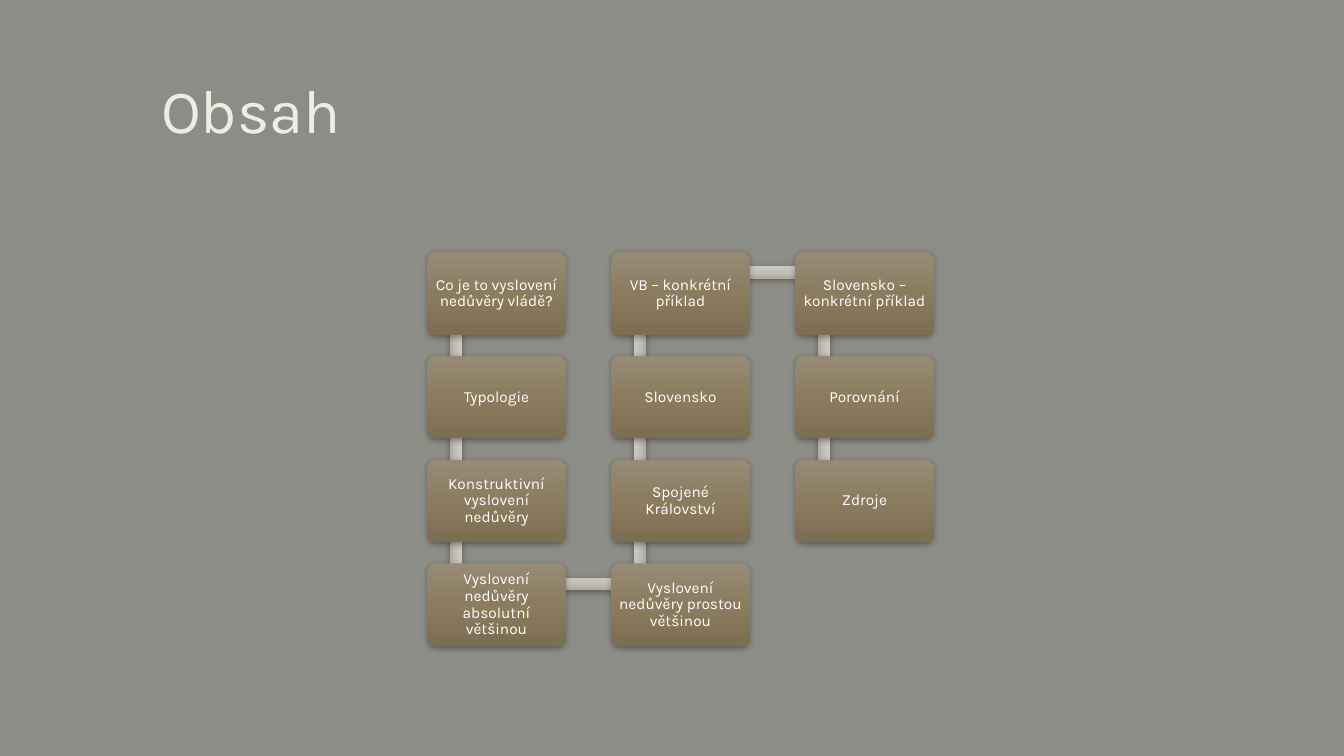
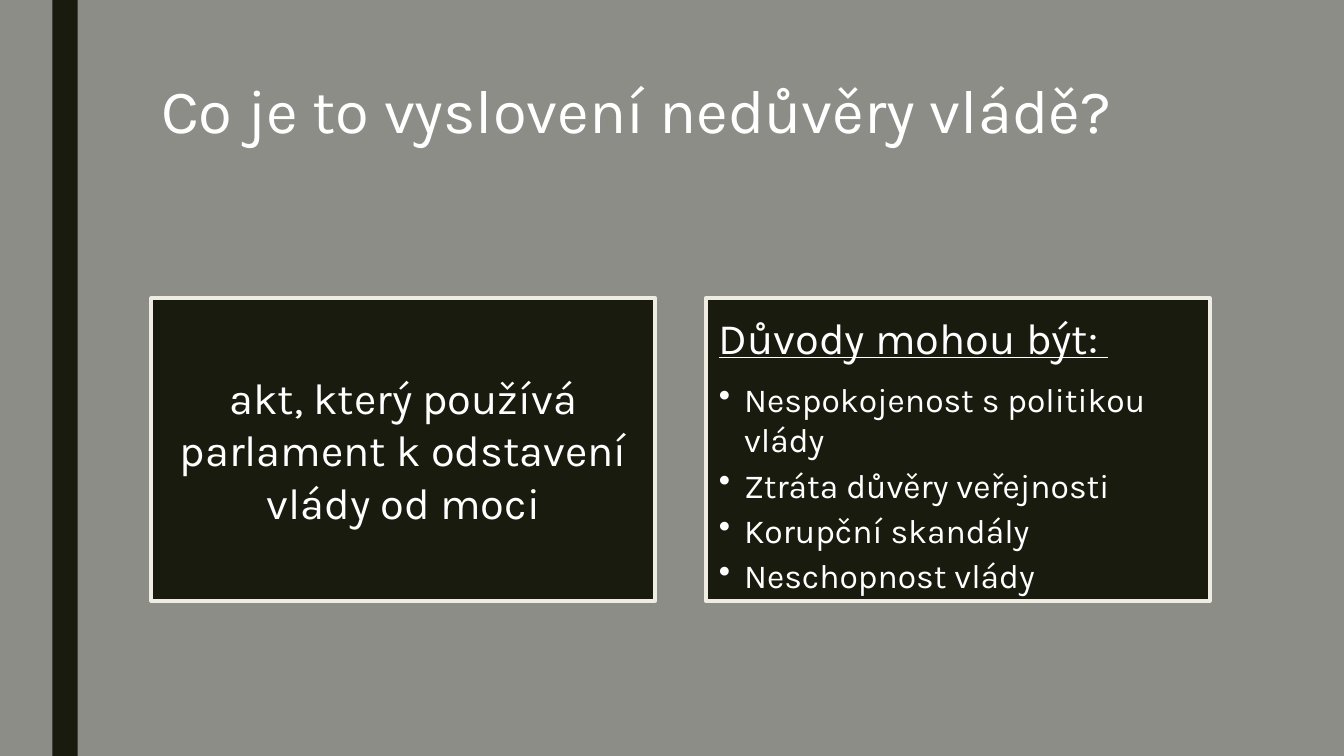
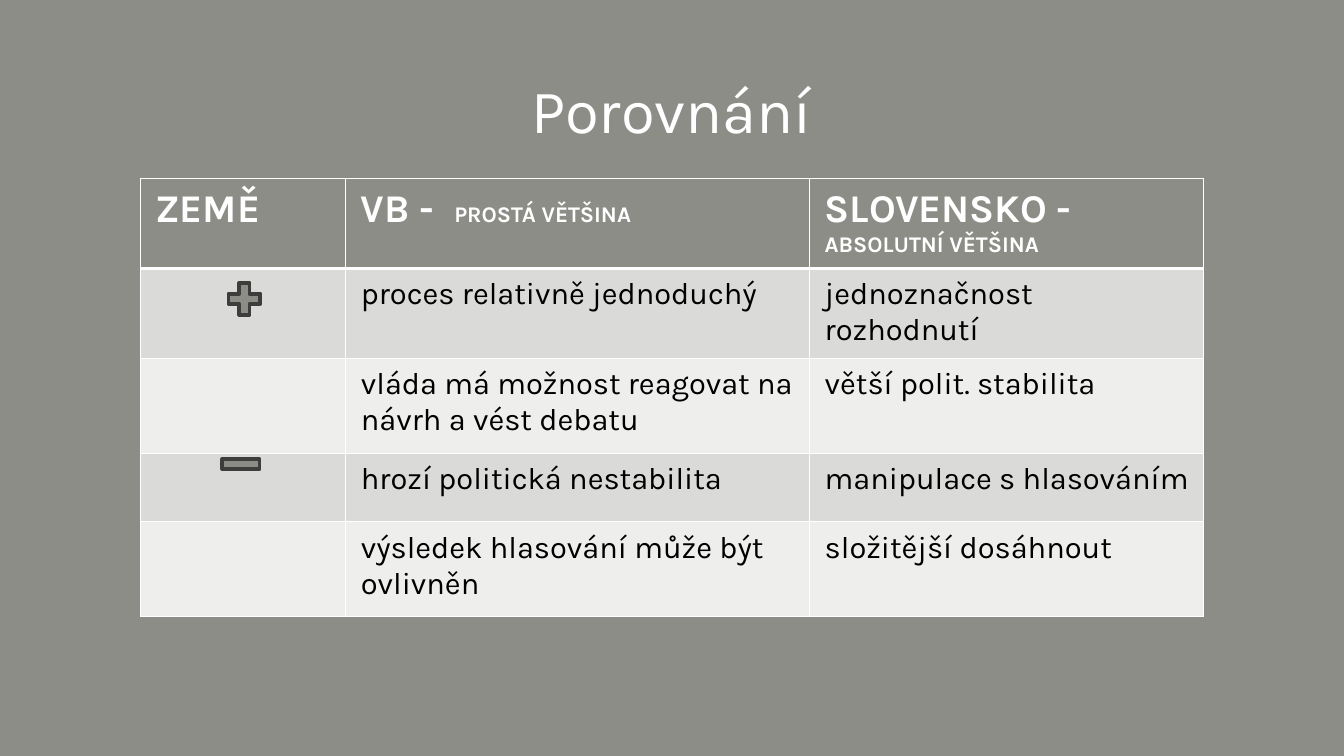
from pptx import Presentation
from pptx.dml.color import RGBColor
from pptx.enum.shapes import MSO_SHAPE as SHAPE
from pptx.enum.text import MSO_ANCHOR as ANCHOR, PP_ALIGN as ALIGN
from pptx.oxml import parse_xml
from pptx.oxml.ns import nsdecls
from pptx.util import Inches, Pt

color = RGBColor.from_string
FONT = "Karla"
GRAY = "8C8D86"
DARK = "191B0E"
CREAM = "EFEDE3"
WHITE = "FFFFFF"
BLACK = "000000"
SIGN_LINE = "3D3E3B"
BAND_FILLS = ["EEEEED", "DADBD9"]
BAR_STOPS = ["CCC7C0", "C4BFB6", "AFAAA1"]
BOX_STOPS = ["978B76", "8B7C5F", "7D6E53"]


def add_run(paragraph, text, size, hex_color, bold=False, underline=False):
    run = paragraph.add_run()
    run.text = text
    run.font.name = FONT
    run.font.size = Pt(size)
    run.font.bold = bold
    run.font.underline = underline
    run.font.color.rgb = color(hex_color)


def add_raised_shape(slide, kind, left, top, width, height, stops):
    shape = slide.shapes.add_shape(
        kind, Inches(left), Inches(top), Inches(width), Inches(height))
    properties = shape._element.spPr
    stop_xml = "".join(
        f'<a:gs pos="{position * 50000}"><a:srgbClr val="{stop}"/></a:gs>'
        for position, stop in enumerate(stops))
    properties.append(parse_xml(
        f'<a:gradFill {nsdecls("a")} rotWithShape="1"><a:gsLst>{stop_xml}</a:gsLst>'
        '<a:lin ang="5400000" scaled="0"/></a:gradFill>'))
    shape.line.fill.background()
    properties.append(parse_xml(
        f'<a:effectLst {nsdecls("a")}><a:outerShdw blurRad="57150" dist="19050" '
        'dir="5400000" algn="ctr" rotWithShape="0"><a:srgbClr val="000000">'
        '<a:alpha val="35000"/></a:srgbClr></a:outerShdw></a:effectLst>'))
    return shape


presentation = Presentation()
presentation.slide_width = Inches(13.33)
presentation.slide_height = Inches(7.5)

titles = [
    ("Obsah", CREAM, 1.5, 10.5, ALIGN.LEFT),
    ("Co je to vyslovení nedůvěry vládě?", WHITE, 1.5, 10.5, ALIGN.LEFT),
    ("Porovnání", WHITE, 0.7, 11.93, ALIGN.CENTER),
]
slides = []
for title, title_color, left, width, alignment in titles:
    slide = presentation.slides.add_slide(presentation.slide_layouts[6])
    slide.background.fill.solid()
    slide.background.fill.fore_color.rgb = color(GRAY)
    title_box = slide.shapes.add_textbox(
        Inches(left), Inches(0.75), Inches(width), Inches(1.62))
    title_box.text_frame.word_wrap = True
    paragraph = title_box.text_frame.paragraphs[0]
    paragraph.alignment = alignment
    paragraph.line_spacing = 0.89
    add_run(paragraph, title, 44, title_color)
    slides.append(slide)
contents_slide, definition_slide, comparison_slide = slides

topics = [
    "Co je to vyslovení nedůvěry vládě?",
    "Typologie",
    "Konstruktivní vyslovení nedůvěry",
    "Vyslovení nedůvěry absolutní většinou",
    "Vyslovení nedůvěry prostou většinou",
    "Spojené Království",
    "Slovensko",
    "VB – konkrétní příklad",
    "Slovensko – konkrétní příklad",
    "Porovnání",
    "Zdroje",
]
ROWS = 4
COLUMN_STEP, ROW_STEP = 1.825, 1.03
BAR = 0.12
positions = []
for index in range(len(topics)):
    column, row = divmod(index, ROWS)
    if column % 2:
        row = ROWS - 1 - row
    positions.append((4.24 + column * COLUMN_STEP, 2.5 + row * ROW_STEP))

for index, (topic, (left, top)) in enumerate(zip(topics, positions)):
    if index + 1 < len(topics):
        next_left, next_top = positions[index + 1]
        length = abs(next_left - left) + abs(next_top - top)
        center_x = (left + next_left) / 2 + 0.28
        center_y = (top + next_top) / 2 + 0.2
        bar = add_raised_shape(
            contents_slide, SHAPE.RECTANGLE, center_x - length / 2,
            center_y - BAR / 2, length, BAR, BAR_STOPS)
        if next_top != top:
            bar.rotation = 90 if next_top > top else 270
    box = add_raised_shape(
        contents_slide, SHAPE.ROUNDED_RECTANGLE, left, top, 1.37, 0.82, BOX_STOPS)
    box.adjustments[0] = 0.1
    frame = box.text_frame
    frame.word_wrap = True
    frame.vertical_anchor = ANCHOR.MIDDLE
    frame.margin_left = frame.margin_right = Inches(0.05)
    frame.margin_top = frame.margin_bottom = Inches(0.05)
    paragraph = frame.paragraphs[0]
    paragraph.alignment = ALIGN.CENTER
    paragraph.line_spacing = 0.9
    add_run(paragraph, topic, 11, WHITE)

side_band = definition_slide.shapes.add_shape(
    SHAPE.RECTANGLE, Inches(0.52), 0, Inches(0.25), Inches(7.5))
side_band.shadow.inherit = False
side_band.fill.solid()
side_band.fill.fore_color.rgb = color(DARK)
side_band.line.fill.background()

panels = []
for left, anchor, alignment, heading, underline in [
    (1.5, ANCHOR.MIDDLE, ALIGN.CENTER,
     "akt, který používá parlament k odstavení vlády od moci", False),
    (7, ANCHOR.TOP, ALIGN.LEFT, "Důvody mohou být: ", True),
]:
    panel = definition_slide.shapes.add_shape(
        SHAPE.RECTANGLE, Inches(left), Inches(2.96), Inches(5), Inches(3))
    panel.shadow.inherit = False
    panel.fill.solid()
    panel.fill.fore_color.rgb = color(DARK)
    panel.line.color.rgb = color(CREAM)
    panel.line.width = Pt(2.75)
    frame = panel.text_frame
    frame.word_wrap = True
    frame.vertical_anchor = anchor
    frame.margin_left = frame.margin_right = Inches(0.13)
    frame.margin_top = frame.margin_bottom = Inches(0.13)
    paragraph = frame.paragraphs[0]
    paragraph.alignment = alignment
    paragraph.space_after = Pt(11)
    add_run(paragraph, heading, 31, WHITE, underline=underline)
    panels.append(panel)

for reason in [
    "Nespokojenost s politikou vlády",
    "Ztráta důvěry veřejnosti",
    "Korupční skandály",
    "Neschopnost vlády",
]:
    paragraph = panels[1].text_frame.add_paragraph()
    paragraph.level = 1
    paragraph.alignment = ALIGN.LEFT
    paragraph.space_after = Pt(3.6)
    paragraph_properties = paragraph._p.get_or_add_pPr()
    paragraph_properties.set("marL", str(Inches(0.25)))
    paragraph_properties.set("indent", str(-Inches(0.25)))
    paragraph_properties.append(parse_xml(f'<a:buChar {nsdecls("a")} char="•"/>'))
    add_run(paragraph, reason, 24, WHITE)

header = [
    [("ZEMĚ", 28)],
    [("VB -  ", 28), ("PROSTÁ VĚTŠINA", 16)],
    [("SLOVENSKO -  ", 28), ("ABSOLUTNÍ VĚTŠINA", 16)],
]
comparisons = [
    ("proces relativně jednoduchý", "jednoznačnost rozhodnutí"),
    ("vláda má možnost reagovat na návrh a vést debatu", "větší polit. stabilita"),
    ("hrozí politická nestabilita", "manipulace s hlasováním"),
    ("výsledek hlasování může být ovlivněn", "složitější dosáhnout"),
]
table_rows = [header] + [
    [[], [(britain, 22)], [(slovakia, 22)]] for britain, slovakia in comparisons]
column_widths = [2.04, 4.6, 3.91]
row_heights = [0.68, 0.68, 0.94, 0.68, 0.94]
table = comparison_slide.shapes.add_table(
    len(row_heights), len(column_widths), Inches(1.39), Inches(1.77),
    Inches(sum(column_widths)), Inches(sum(row_heights))).table
for column, width in zip(table.columns, column_widths):
    column.width = Inches(width)
for row_index, (row_cells, height) in enumerate(zip(table_rows, row_heights)):
    is_header = row_index == 0
    table.rows[row_index].height = Inches(height)
    for column_index, runs in enumerate(row_cells):
        cell = table.cell(row_index, column_index)
        cell.margin_left = cell.margin_right = Inches(0.15)
        cell.margin_top = cell.margin_bottom = Inches(0.08)
        cell_properties = cell._tc.get_or_add_tcPr()
        for side in "LRTB":
            border = Pt(3 if is_header and side == "B" else 1)
            cell_properties.append(parse_xml(
                f'<a:ln{side} {nsdecls("a")} w="{border}"><a:solidFill>'
                f'<a:srgbClr val="{WHITE}"/></a:solidFill></a:ln{side}>'))
        cell.fill.solid()
        cell.fill.fore_color.rgb = color(GRAY if is_header else BAND_FILLS[row_index % 2])
        for text, size in runs:
            add_run(cell.text_frame.paragraphs[0], text, size,
                    WHITE if is_header else BLACK, bold=is_header)

for kind, left, top, width in [
    (SHAPE.MATH_PLUS, 2.21, 2.75, 0.43),
    (SHAPE.MATH_MINUS, 2.14, 4.39, 0.5),
]:
    sign = comparison_slide.shapes.add_shape(
        kind, Inches(left), Inches(top), Inches(width), Inches(0.43))
    sign.shadow.inherit = False
    sign.fill.solid()
    sign.fill.fore_color.rgb = color(GRAY)
    sign.line.color.rgb = color(SIGN_LINE)
    sign.line.width = Pt(2.75)

presentation.save("out.pptx")
